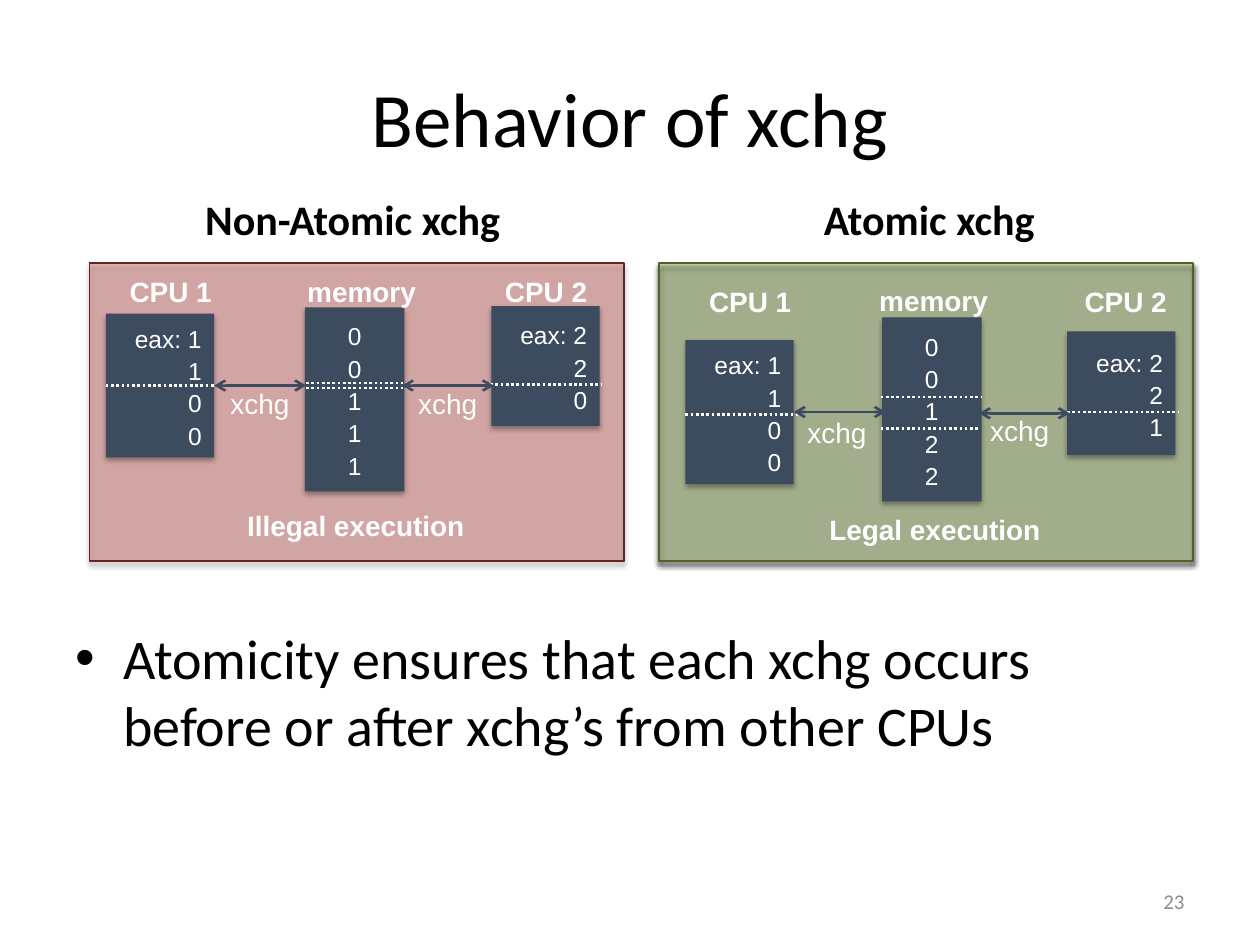
from lxml import etree
from pptx import Presentation
from pptx.dml.color import RGBColor
from pptx.enum.dml import MSO_LINE
from pptx.enum.shapes import MSO_CONNECTOR, MSO_SHAPE
from pptx.enum.text import MSO_ANCHOR, MSO_AUTO_SIZE, PP_ALIGN
from pptx.oxml import parse_xml
from pptx.oxml.ns import nsdecls, qn
from pptx.util import Inches, Pt

LEFT, CENTER, RIGHT = PP_ALIGN.LEFT, PP_ALIGN.CENTER, PP_ALIGN.RIGHT
TOP, MIDDLE = MSO_ANCHOR.TOP, MSO_ANCHOR.MIDDLE
RECT, ROUNDED = MSO_SHAPE.RECTANGLE, MSO_SHAPE.ROUNDED_RECTANGLE
STRAIGHT, DOTTED = MSO_CONNECTOR.STRAIGHT, MSO_LINE.ROUND_DOT
FIT_SHAPE = MSO_AUTO_SIZE.SHAPE_TO_FIT_TEXT
RIGHT_SIDE = 3

THEME = {
    "ink": "000000", "light": "FFFFFF", "muted": "8C8C8C", "slate": "3C4B5E",
    "heading": {"name": "Calibri", "size": Pt(24), "bold": True},
    "title": {"name": "Calibri", "size": Pt(44)},
    "body": {"name": "Calibri", "size": Pt(32)},
    "number": {"name": "Calibri", "size": Pt(12)},
    "value": {"name": "Arial", "size": Pt(14)},
    "label": {"name": "Arial", "size": Pt(16)},
    "strong": {"name": "Arial", "size": Pt(16), "bold": True},
}
SHADOW = (f'<a:effectLst {nsdecls("a")}><a:outerShdw blurRad="39400" dist="22900" '
          'dir="5400000" rotWithShape="0"><a:srgbClr val="000000">'
          '<a:alpha val="35000"/></a:srgbClr></a:outerShdw></a:effectLst>')

prs = Presentation()
prs.slide_width, prs.slide_height = Inches(10), Inches(7.5)
slide = prs.slides.add_slide(prs.slide_layouts[6])
# Grid of 100 columns by 75 rows with square cells
CELL = prs.slide_width // 100


def write(shapes, area, text, style, color, align=LEFT, anchor=TOP, wrap=True,
          fill=None, spacing=None):
    """Place text in a plain box, or in a shadowed rectangle if fill is given."""
    place = [round(n * CELL) for n in area]
    if fill:
        box = shapes.add_shape(RECT, *place)
        box.fill.solid()
        box.fill.fore_color.rgb = RGBColor.from_string(fill)
        box.line.fill.background()
        box._element.spPr.append(parse_xml(SHADOW))
    else:
        box = shapes.add_textbox(*place)
    frame = box.text_frame
    frame.text = text
    frame.word_wrap, frame.vertical_anchor = wrap, anchor
    if not wrap:
        frame.auto_size = FIT_SHAPE
    for paragraph in frame.paragraphs:
        paragraph.alignment, paragraph.line_spacing = align, spacing
        for run in paragraph.runs:
            run.font.color.rgb = RGBColor.from_string(color)
            for key, value in THEME[style].items():
                setattr(run.font, key, value)
    return box


def rule(shapes, x1, x2, y, color, dotted):
    """Draw a level line: dotted, or solid with an arrowhead at both ends."""
    line = shapes.add_connector(STRAIGHT, *[round(n * CELL) for n in (x1, y, x2, y)])
    line.line.color.rgb = RGBColor.from_string(color)
    line.line.width = Pt(1.5)
    if dotted:
        line.line.dash_style = DOTTED
    else:
        for end in ("a:headEnd", "a:tailEnd"):
            etree.SubElement(line.line._get_or_add_ln(), qn(end), type="arrow")
    etree.SubElement(line._element.spPr, qn("a:effectLst"))
    return line


# Title, conclusion and page number
write(slide.shapes, (5, 3, 90, 12.5), "Behavior of xchg", "title", THEME["ink"],
      CENTER, MIDDLE)
conclusion = write(
    slide.shapes, (5, 49, 90, 18),
    "Atomicity ensures that each xchg occurs before or after xchg’s from other CPUs",
    "body", THEME["ink"])
bullet = conclusion.text_frame.paragraphs[0]
bullet.space_before = Pt(6.4)
indent = bullet._p.get_or_add_pPr()
indent.set("marL", str(Inches(0.38)))
indent.set("indent", str(-Inches(0.38)))
etree.SubElement(indent, qn("a:buFont"), typeface="Arial")
etree.SubElement(indent, qn("a:buChar"), char="•")
write(slide.shapes, (71.7, 69.5, 23.3, 4), "23", "number", THEME["muted"],
      RIGHT, MIDDLE)

# The two executions; areas are (left, top, width, height) in grid cells
EXECUTIONS = [
    {"heading": ("Non-Atomic xchg", 15.3, 25.7), "panel": 7.1,
     "fill": "C0504D", "alpha": 39, "edge": "632523",
     "verdict": ("Illegal execution", 10.1, 39.9, 36.3),
     "cpu1": ((8.4, 24.9, 8.6, 11.4), "eax: 1\v1\v0\v0"),
     "cpu2": ((39, 24.3, 8.6, 9.5), "eax: 2\v2\v0"),
     "memory": ((24.2, 24.4, 7.9, 14.6), "0\v0\n1\v1\v1"),
     "labels": [("CPU 1", 9.3, 21.3, 8.6), ("CPU 2", 39.1, 21.3, 8.6),
                ("memory", 23.4, 21.3, 10.7)],
     "xchg": [(17.3, 30.2), (32.2, 30.2)],
     "cuts": [(8.4, 17.3, 30.6), (38.9, 47.8, 30.5),
              (24.3, 32.3, 30.4), (24.3, 32.3, 30.8)],
     "arrows": [(17, 24.3, 30.6), (31.9, 39.2, 30.6)]},
    {"heading": ("Atomic xchg", 64.4, 18.9), "panel": 52.3,
     "fill": "9BBB59", "alpha": 35, "edge": "4F6228",
     "verdict": ("Legal execution", 64.7, 40.2, 19),
     "cpu1": ((54.4, 27, 8.6, 11.4), "eax: 1\v1\v0\v0"),
     "cpu2": ((84.7, 26.3, 8.6, 9.8), "eax: 2\v2\v1"),
     "memory": ((70, 25.2, 7.9, 14.6), "0\v0\v1\v2\v2"),
     "labels": [("CPU 1", 55.3, 22.1, 8.6), ("CPU 2", 85.1, 22.1, 8.6),
                ("memory", 68.8, 22, 10.7)],
     "xchg": [(63.1, 32.5), (77.6, 32.3)],
     "cuts": [(54.4, 63.3, 32.9), (84.7, 93.5, 32.7),
              (69.9, 77.9, 31.5), (69.9, 77.8, 34)],
     "arrows": [(63, 70.3, 32.7), (77.7, 84.9, 32.8)]},
]

for case in EXECUTIONS:
    heading, x, width = case["heading"]
    write(slide.shapes, (x, 14.9, width, 5), heading, "heading", THEME["ink"],
          wrap=False)
    group = slide.shapes.add_group_shape().shapes

    # Tinted panel
    panel = group.add_shape(
        ROUNDED, *[round(n * CELL) for n in (case["panel"], 20.9, 42.4, 23.6)])
    panel.adjustments[0] = 0
    panel.fill.solid()
    panel.fill.fore_color.rgb = RGBColor.from_string(case["fill"])
    tint = panel._element.spPr.find(qn("a:solidFill"))[0]
    etree.SubElement(tint, qn("a:alpha"), val=str(case["alpha"] * 1000))
    panel.line.color.rgb = RGBColor.from_string(case["edge"])
    panel.line.width = Pt(1)
    panel._element.spPr.append(parse_xml(SHADOW))

    # Registers and memory
    blocks = {part: write(group, *case[part], "value", THEME["light"], align, MIDDLE,
                          fill=THEME["slate"], spacing=1.1)
              for part, align in (("cpu1", RIGHT), ("cpu2", RIGHT), ("memory", CENTER))}

    # Captions
    for text, x, y, width in case["labels"]:
        write(group, (x, y, width, 3.7), text, "strong", THEME["light"], wrap=False)
    for x, y in case["xchg"]:
        write(group, (x, y, 6.8, 3.7), "xchg", "label", THEME["light"], wrap=False)
    verdict, x, y, width = case["verdict"]
    write(group, (x, y, width, 3.7), verdict, "strong", THEME["light"], CENTER)

    # Points of exchange and the arrows between blocks
    for cut in case["cuts"]:
        rule(group, *cut, THEME["light"], dotted=True)
    first_swap, second_swap = [rule(group, *arrow, THEME["slate"], dotted=False)
                               for arrow in case["arrows"]]
    first_swap.begin_connect(blocks["cpu1"], RIGHT_SIDE)

prs.save("out.pptx")
